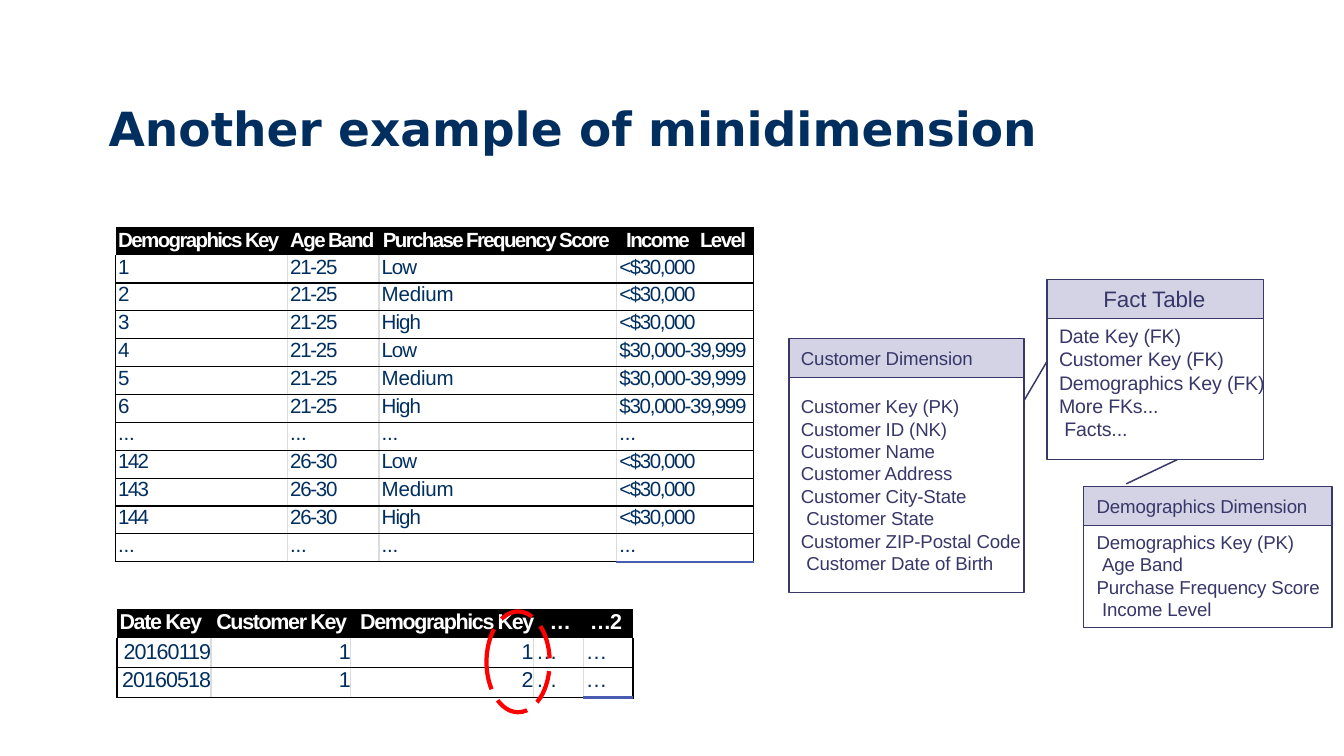
import pptx
import pptx.dml.color
import pptx.enum.dml
import pptx.enum.shapes
import pptx.enum.text
import pptx.oxml
import pptx.oxml.ns
import pptx.util
from lxml import etree

RGB = pptx.dml.color.RGBColor
Inches = pptx.util.Inches
Pt = pptx.util.Pt
SHAPE = pptx.enum.shapes.MSO_SHAPE
RIGHT = pptx.enum.text.PP_ALIGN.RIGHT

NAVY = RGB(0x00, 0x2F, 0x5F)
INK = RGB(0x37, 0x37, 0x69)
LILAC = RGB(0xD3, 0xD3, 0xE5)
GREY = RGB(0xDA, 0xDC, 0xDD)
BLUE = RGB(0x48, 0x5D, 0xB1)
BLACK = RGB(0, 0, 0)
WHITE = RGB(255, 255, 255)
RED = RGB(255, 0, 0)

# Letter spacing by cell text, in points
TRACK = {"21-25": -0.7, "26-30": -0.7, "Low": -0.6, "Medium": -0.1,
         "High": -0.5, "<$30,000": -0.8, "$30,000-39,999": -0.7,
         "142": -0.9, "143": -0.9, "144": -0.9, "...": -0.1,
         "20160119": -0.5, "20160518": -0.5}


def add(parent, tag, **attrs):
    node = etree.SubElement(parent, pptx.oxml.ns.qn("a:" + tag))
    for key, val in attrs.items():
        node.set(key, str(val))
    return node


class Board:
    def __init__(self, slide, font="Arial"):
        self.slide = slide
        self.font = font

    def style(self, para, size, color, track=0, bold=False, font=None):
        for run in para.runs:
            run.font.name = font or self.font
            run.font.size = Pt(size)
            run.font.bold = bold
            run.font.color.rgb = color
            run._r.get_or_add_rPr().set("spc", str(round(track * 100)))

    def title(self, text, *place):
        box = self.slide.shapes.add_textbox(*map(Inches, place))
        box.text_frame.word_wrap = True
        box.text_frame.text = text
        self.style(box.text_frame.paragraphs[0], 25.2, NAVY, 0, True, "DejaVu Sans")

    def text(self, lines, place, size=10, shift=()):
        """Put one paragraph per line; lines listed in shift sit further in."""
        frame = self.slide.shapes.add_textbox(*map(Inches, place)).text_frame
        frame.word_wrap = True
        frame.margin_top = frame.margin_right = frame.margin_bottom = 0
        frame.margin_left = Inches(0.01)
        for i, line in enumerate(lines):
            para = frame.paragraphs[0] if i == 0 else frame.add_paragraph()
            para.text = line
            para.line_spacing = Pt(size * 1.2)
            if line in shift:
                para._p.get_or_add_pPr().set("marL", str(Inches(0.04)))
            self.style(para, size, INK, -0.05)

    def shape(self, kind, place, line, width, fill=None):
        item = self.slide.shapes.add_shape(kind, *map(Inches, place))
        item.shadow.inherit = False
        if fill is None:
            item.fill.background()
        else:
            item.fill.solid()
            item.fill.fore_color.rgb = fill
        item.line.color.rgb = line
        item.line.width = Pt(width)
        return item

    def entity(self, left, top, width, body):
        head = 0.29
        self.shape(SHAPE.RECTANGLE, (left, top, width, head), INK, 0.78, LILAC)
        self.shape(SHAPE.RECTANGLE, (left, top + head, width, body), INK, 0.78)

    def link(self, *ends):
        straight = pptx.enum.shapes.MSO_CONNECTOR.STRAIGHT
        item = self.slide.shapes.add_connector(straight, *map(Inches, ends))
        item.line.color.rgb = INK
        item.line.width = Pt(0.78)
        add(item._element.spPr, "effectLst")

    def border(self, cell, side, color, width=0.75):
        line = add(cell._tc.get_or_add_tcPr(), "ln" + side, w=Pt(width))
        if color is None:
            add(line, "noFill")
        else:
            add(add(line, "solidFill"), "srgbClr", val=color)

    def cell(self, cell, text, left, top=0):
        cell.margin_right = cell.margin_bottom = 0
        cell.margin_left = Inches(left)
        cell.margin_top = Inches(top)
        para = cell.text_frame.paragraphs[0]
        para.text = text
        return para

    def table(self, heads, tabs, rows, place, cols, size, track, right=0):
        """Draw a table whose heads share one merged cell, set out by tabs."""
        count, wide = len(rows) + 1, len(cols)
        frame = self.slide.shapes.add_table(count, wide, *map(Inches, place))
        grid = frame.table
        grid.first_row = grid.horz_banding = False
        for col, width in zip(grid.columns, cols):
            col.width = Inches(width)
        for row in grid.rows:
            row.height = Inches(place[3] / count)

        # Header
        for c in range(wide):
            for side in "LRTB":
                self.border(grid.cell(0, c), side, None)
            grid.cell(0, c).fill.solid()
            grid.cell(0, c).fill.fore_color.rgb = BLACK
        grid.cell(0, 0).merge(grid.cell(0, wide - 1))
        para = self.cell(grid.cell(0, 0), "\t".join(heads), 0.02, 0.01)
        stops = add(para._p.get_or_add_pPr(), "tabLst")
        for tab in tabs:
            add(stops, "tab", pos=Inches(tab), algn="l")
        self.style(para, size, WHITE, track, True)

        # Body
        for r, row in enumerate(rows, 1):
            for c, text in enumerate(row):
                cell = grid.cell(r, c)
                para = self.cell(cell, text, 0.02, 0.01 if r == 1 else 0)
                if c < right:
                    para.alignment = RIGHT
                self.style(para, size, NAVY, TRACK.get(text, 0))
                last = c == wide - 1
                corner = last and r == count - 1
                self.border(cell, "L", GREY if c else BLACK)
                self.border(cell, "R", BLACK if last else GREY)
                self.border(cell, "T", BLACK if r > 1 else None)
                self.border(cell, "B", BLUE if corner else BLACK, 1.5 if corner else 0.75)
                cell.fill.background()


def main():
    deck = pptx.Presentation()
    deck.slide_width = Inches(10)
    deck.slide_height = deck.slide_width * 9 // 16
    board = Board(deck.slides.add_slide(deck.slide_layouts[6]))
    board.title("Another example of minidimension", 0.71, 0.69, 7.49, 0.65)

    # Demographics table
    low, high = "<$30,000", "$30,000-39,999"
    levels = ("Low", "Medium", "High")
    gap = ("...",) * 4
    rows = []
    for start, age, pay in ((1, "21-25", low), (4, "21-25", high), (142, "26-30", low)):
        if start == 142:
            rows.append(gap)
        rows += [(str(start + i), age, level, pay) for i, level in enumerate(levels)]
    rows.append(gap)
    board.table(("Demographics Key", "Age Band", "Purchase Frequency Score", "Income", "Level"),
                (1.28, 1.97, 3.78, 4.33), rows, (0.86, 1.69, 4.75, 2.49),
                (1.28, 0.68, 1.77, 1.02), 11, -0.9)

    # Customer dimension
    board.entity(5.87, 2.52, 1.75, 1.6)
    board.text(["Customer Dimension"], (5.95, 2.58, 1.4, 0.18))
    board.text(["Customer Key (PK)", "Customer ID (NK)", "Customer Name", "Customer Address",
                "Customer City-State", "Customer State"],
               (5.95, 2.94, 1.4, 1.02), shift=("Customer State",))
    board.text(["Customer ZIP-Postal Code", "Customer Date of Birth"],
               (5.95, 3.94, 1.7, 0.35), shift=("Customer Date of Birth",))

    # Fact table
    board.entity(7.79, 2.08, 1.61, 1.05)
    board.text(["Fact Table"], (8.2, 2.12, 0.85, 0.22), 12)
    board.text(["Date Key (FK)", "Customer Key (FK)"], (7.87, 2.41, 1.4, 0.37), 10.5)
    board.text(["Demographics Key (FK)"], (7.87, 2.76, 1.6, 0.19), 10.5)
    board.text(["More FKs...", "Facts..."], (7.87, 2.93, 0.85, 0.37), 10.5, ("Facts...",))

    # Demographics dimension
    board.entity(8.06, 3.62, 1.85, 0.76)
    board.text(["Demographics Dimension"], (8.15, 3.68, 1.7, 0.18))
    board.text(["Demographics Key (PK)", "Age Band", "Purchase Frequency Score", "Income Level"],
               (8.15, 3.95, 1.75, 0.68), shift=("Age Band", "Income Level"))

    # Links between the boxes
    board.link(7.62, 2.98, 7.79, 2.69)
    board.link(8.76, 3.42, 8.38, 3.6)

    # Fact rows, with the changed key ringed
    board.table(("Date Key", "Customer Key", "Demographics Key", "…", "…2"),
                (0.72, 1.79, 3.2, 3.5),
                [("20160119", "1", "1", "…", "…"), ("20160518", "1", "2", "…", "…")],
                (0.87, 4.53, 3.84, 0.66), (0.7, 1.04, 1.36, 0.37, 0.37), 11.5, -0.75, 3)
    ring = board.shape(SHAPE.OVAL, (3.62, 4.55, 0.47, 0.75), RED, 2.28)
    ring.line.dash_style = pptx.enum.dml.MSO_LINE.LONG_DASH

    deck.save("out.pptx")


if __name__ == "__main__":
    main()
